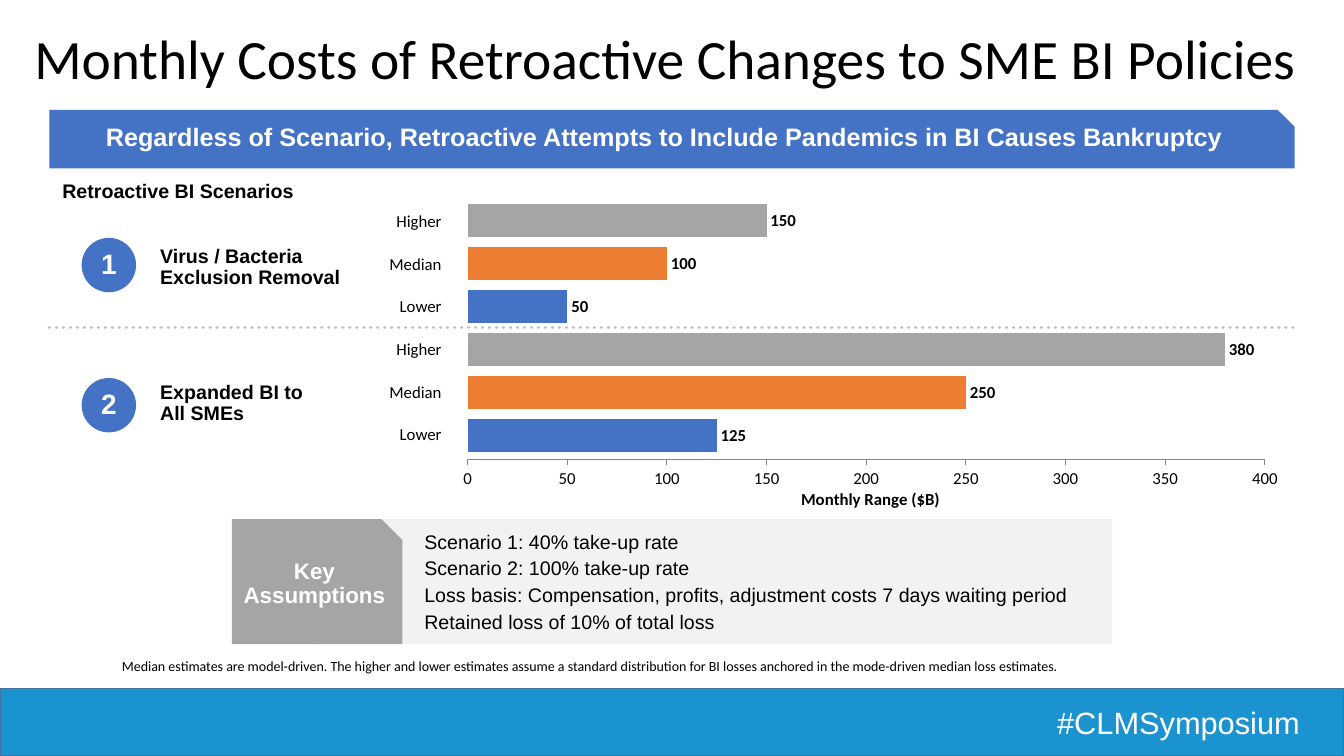
import pptx
import pptx.chart.data
import pptx.dml.color
import pptx.enum.chart
import pptx.enum.dml
import pptx.enum.shapes
import pptx.enum.text
import pptx.oxml
import pptx.oxml.ns
import pptx.util

Inches = pptx.util.Inches
Pt = pptx.util.Pt
SHAPE = pptx.enum.shapes.MSO_SHAPE
ALIGN = pptx.enum.text.PP_ALIGN
ANCHOR = pptx.enum.text.MSO_ANCHOR
BLUE, ORANGE, GRAY = "4472C4", "ED7D31", "A5A5A5"
BLACK, WHITE = "000000", "FFFFFF"
INSET = (0.1, 0.05, 0.1, 0.05)


def paint(color, code):
    """Set a colour format from a hex string."""
    color.rgb = pptx.dml.color.RGBColor.from_string(code)


def style(font, size, code=BLACK, bold=False, name="Arial"):
    """Format a font."""
    font.name, font.size, font.bold = name, Pt(size), bold
    paint(font.color, code)


def write(frame, paras, size, code=BLACK, bold=False, name="Arial",
          align=ALIGN.LEFT, anchor=ANCHOR.MIDDLE, inset=INSET, gap=0):
    """Fill a text frame with paragraphs, breaking lines at newlines."""
    frame.word_wrap = True
    frame.auto_size = pptx.enum.text.MSO_AUTO_SIZE.NONE
    frame.vertical_anchor = anchor
    (frame.margin_left, frame.margin_top,
     frame.margin_right, frame.margin_bottom) = map(Inches, inset)
    for row, text in enumerate(paras):
        para = frame.add_paragraph() if row else frame.paragraphs[0]
        para.alignment, para.line_spacing = align, 0.9
        para.space_before = Pt(gap if row else 0)
        for part, line in enumerate(text.split("\n")):
            if part:
                para.add_line_break()
            run = para.add_run()
            run.text = line
            style(run.font, size, code, bold, name)


def label(slide, box, paras, size, **look):
    """Add a text box."""
    area = slide.shapes.add_textbox(*map(Inches, box))
    write(area.text_frame, paras, size, **look)


def block(slide, kind, box, fill, edge=None):
    """Add a flat filled shape."""
    shape = slide.shapes.add_shape(kind, *map(Inches, box))
    shape.shadow.inherit = False
    shape.fill.solid()
    paint(shape.fill.fore_color, fill)
    if edge:
        paint(shape.line.color, edge)
        shape.line.width = Pt(1)
    else:
        shape.line.fill.background()
    return shape


def panel(slide, kind, box, fill, text, size, inset, snip=None):
    """Add a filled shape with bold white centred text."""
    shape = block(slide, kind, box, fill)
    if snip:
        shape.adjustments[0] = snip
    write(shape.text_frame, [text], size, WHITE, True,
          align=ALIGN.CENTER, inset=inset)


def divide(slide, left, right, top):
    """Add a dotted level line."""
    line = slide.shapes.add_connector(
        pptx.enum.shapes.MSO_CONNECTOR.STRAIGHT,
        Inches(left), Inches(top), Inches(right), Inches(top))
    paint(line.line.color, "BFBFBF")
    line.line.width = Pt(2.5)
    line.line.dash_style = pptx.enum.dml.MSO_LINE.ROUND_DOT
    props = line._element.spPr
    props.find(pptx.oxml.ns.qn("a:ln")).set("cap", "rnd")
    props.append(pptx.oxml.parse_xml(
        f'<a:effectLst {pptx.oxml.ns.nsdecls("a")}/>'))


def place(chart, left, top, width, height):
    """Fix the inner plot area as fractions of the chart."""
    area = chart._chartSpace.chart.plotArea
    for old in area.findall(pptx.oxml.ns.qn("c:layout")):
        area.remove(old)
    marks = {"layoutTarget": "inner", "xMode": "edge", "yMode": "edge",
             "x": left, "y": top, "w": width, "h": height}
    parts = "".join(f'<c:{key} val="{val}"/>' for key, val in marks.items())
    area.insert(0, pptx.oxml.parse_xml(
        f'<c:layout {pptx.oxml.ns.nsdecls("c")}><c:manualLayout>{parts}'
        '</c:manualLayout></c:layout>'))


def bars(slide, box, values):
    """Add the bar chart of monthly costs."""
    data = pptx.chart.data.CategoryChartData()
    data.categories = ["1"]
    for count, value in enumerate(values, 1):
        data.add_series(f"Series {count}", [value])
    chart = slide.shapes.add_chart(
        pptx.enum.chart.XL_CHART_TYPE.BAR_CLUSTERED,
        *map(Inches, box), data).chart
    style(chart.font, 12, name="Calibri")
    chart.has_legend = chart.has_title = False
    plot = chart.plots[0]
    plot.gap_width, plot.overlap = 40, -30
    plot.vary_by_categories = False
    for series, code in zip(plot.series, [BLUE, ORANGE, GRAY] * 2):
        series.format.fill.solid()
        paint(series.format.fill.fore_color, code)
        tags = series.data_labels
        tags.show_value = True
        tags.number_format, tags.number_format_is_linked = "#,##0", False
        tags.position = pptx.enum.chart.XL_LABEL_POSITION.OUTSIDE_END
        style(tags.font, 12, bold=True, name="Calibri")
    chart.category_axis.visible = False
    axis = chart.value_axis
    axis.has_major_gridlines = False
    axis.minimum_scale, axis.maximum_scale, axis.major_unit = 0, 400, 50
    axis.major_tick_mark = pptx.enum.chart.XL_TICK_MARK.OUTSIDE
    paint(axis.format.line.color, "868686")
    run = axis.axis_title.text_frame.paragraphs[0].add_run()
    run.text = "Monthly Range ($B)"
    style(run.font, 12, bold=True, name="Calibri")
    place(chart, 0.337, 0.021, 0.647, 0.807)


def levels(slide, box, names):
    """Add the one-column table that names the bars."""
    table = slide.shapes.add_table(len(names), 1, *map(Inches, box)).table
    table.first_row = table.horz_banding = False
    for row, name in enumerate(names):
        cell = table.cell(row, 0)
        cell.fill.background()
        cell.vertical_anchor = ANCHOR.MIDDLE
        para = cell.text_frame.paragraphs[0]
        para.alignment = ALIGN.RIGHT
        run = para.add_run()
        run.text = name
        style(run.font, 12, name="Calibri")


def main():
    """Build and save the slide."""
    deck = pptx.Presentation()
    deck.slide_width, deck.slide_height = Inches(13.33), Inches(7.5)
    slide = deck.slides.add_slide(deck.slide_layouts[5])
    title = slide.shapes.title
    title.left, title.top, title.width, title.height = map(
        Inches, (0.24, 0.26, 12.86, 1.04))
    write(title.text_frame,
          ["Monthly Costs of Retroactive Changes to SME BI Policies"],
          39.6, name="Calibri", anchor=ANCHOR.TOP)

    block(slide, SHAPE.RECTANGLE, (0, 6.83, 13.33, 0.67), "1C93D1", "43739E")
    label(slide, (9.91, 6.95, 3.08, 0.47), ["#CLMSymposium"], 22,
          code=WHITE, align=ALIGN.RIGHT)
    panel(slide, SHAPE.SNIP_1_RECTANGLE, (0.49, 1.09, 12.35, 0.58), BLUE,
          "Regardless of Scenario, Retroactive Attempts to Include "
          "Pandemics in BI Causes Bankruptcy ", 18, (0.2, 0.1, 0.2, 0.2), 0.29)
    label(slide, (1.21, 6.24, 11.64, 0.45),
          ["Median estimates are model-driven. The higher and lower estimates "
           "assume a standard distribution for BI losses anchored in the "
           "mode-driven median loss estimates."],
          10, name="Calibri", anchor=ANCHOR.BOTTOM, inset=(0, 0, 0, 0))

    block(slide, SHAPE.RECTANGLE, (3.13, 5.15, 7.9, 1.24), "F2F2F2")
    panel(slide, SHAPE.SNIP_1_RECTANGLE, (2.3, 5.15, 1.69, 1.24), GRAY,
          "Key Assumptions", 16, (0.05, 0.05, 0, 0.1))
    label(slide, (4.11, 5.23, 6.92, 1.02),
          ["Scenario 1: 40% take-up rate",
           "Scenario 2: 100% take-up rate",
           "Loss basis: Compensation, profits, adjustment costs "
           "7 days waiting period",
           "Retained loss of 10% of total loss"],
          14, anchor=ANCHOR.TOP, gap=4)

    bars(slide, (0.52, 1.89, 12.22, 3.22), [125, 250, 380, 50, 100, 150])
    levels(slide, (3.13, 1.99, 1.35, 2.54), ["Higher", "Median", "Lower"] * 2)
    divide(slide, 0.49, 12.84, 3.25)
    label(slide, (0.52, 1.66, 3.13, 0.49), ["Retroactive BI Scenarios"], 14,
          bold=True)
    cases = [("Virus / Bacteria Exclusion Removal", 2.32, 2.36),
             ("Expanded BI to\nAll SMEs", 3.67, 3.75)]
    for count, (text, top, disc) in enumerate(cases, 1):
        label(slide, (1.49, top, 2.04, 0.67), [text], 14, bold=True)
        panel(slide, SHAPE.OVAL, (0.81, disc, 0.54, 0.54), BLUE,
              str(count), 20, (0, 0, 0, 0))
    deck.save("out.pptx")


if __name__ == "__main__":
    main()
